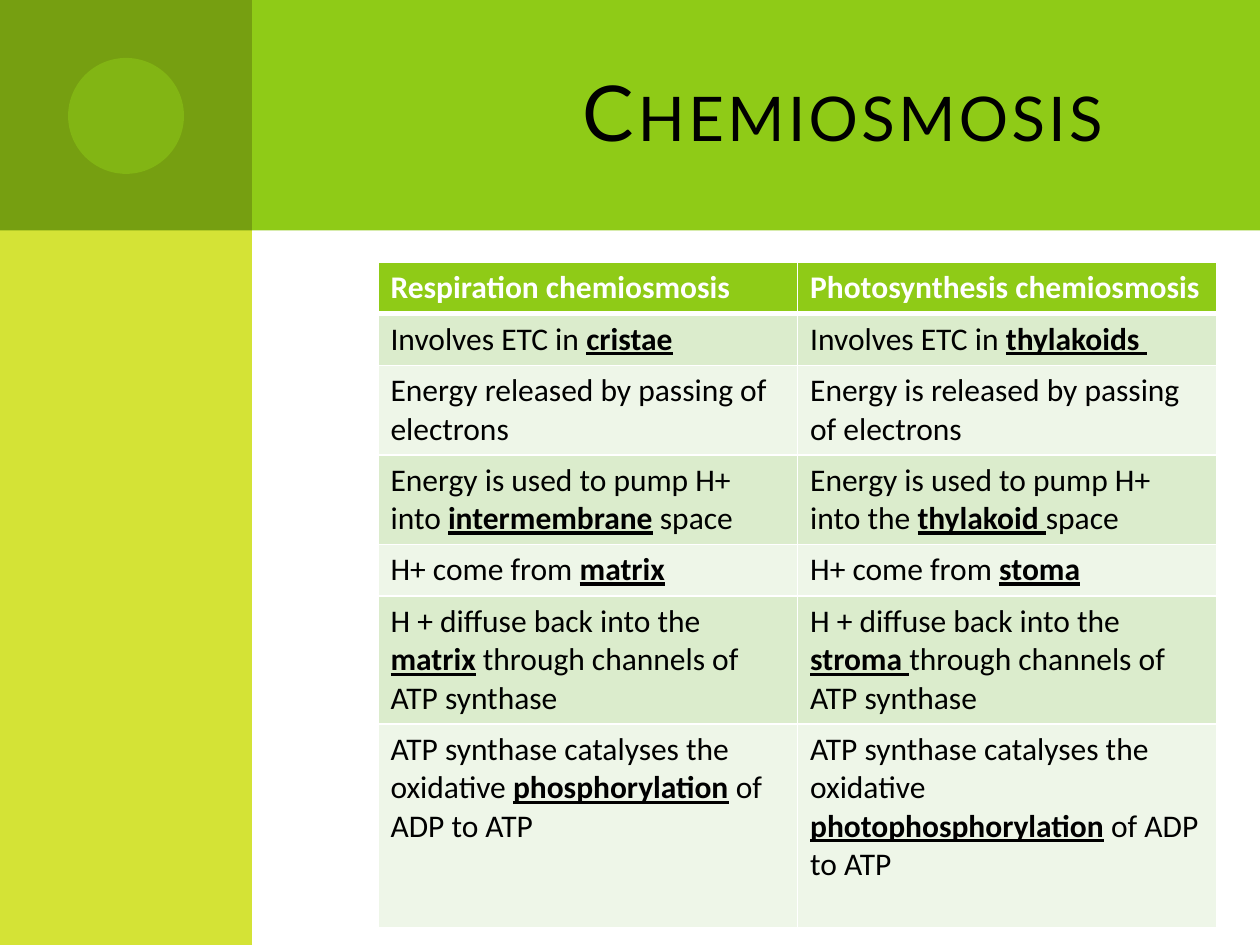
from lxml import etree
from pptx import Presentation
from pptx.dml import color
from pptx.enum import shapes, text
from pptx.oxml import ns
from pptx.util import Inches, Pt

GREEN, WHITE, BLACK = "8FCB17", "FFFFFF", "000000"


def paint(target, fill, alpha=None):
    """Give a shape or cell a solid fill, with opacity in percent."""
    target.fill.solid()
    target.fill.fore_color.rgb = color.RGBColor.from_string(fill)
    if alpha is not None:
        tint = target.fill._xPr.find(".//" + ns.qn("a:srgbClr"))
        etree.SubElement(tint, ns.qn("a:alpha"), val=str(alpha * 1000))


def add_span(para, words, font="Calibri", size=18, ink=BLACK, bold=False, underline=False):
    span = para.add_run()
    span.text = words
    span.font.name = font
    span.font.size = Pt(size)
    span.font.bold = bold
    span.font.underline = underline
    span.font.color.rgb = color.RGBColor.from_string(ink)
    return span


deck = Presentation()
deck.slide_width, deck.slide_height = Inches(10), Inches(7.5)
page = deck.slides.add_slide(deck.slide_layouts[5])
title = page.shapes.title

# Background panels
RECT, OVAL = shapes.MSO_SHAPE.RECTANGLE, shapes.MSO_SHAPE.OVAL
panels = [
    (RECT, 0.5, 0, 9.5, 1.83, GREEN, None),
    (RECT, 0, 0, 2, 7.5, "D4E336", None),
    (RECT, 0, 0, 2, 1.83, "769F11", None),
    (OVAL, 0.54, 0.46, 0.92, 0.92, GREEN, 50),
]
for kind, left, top, width, height, fill, alpha in panels:
    panel = page.shapes.add_shape(kind, Inches(left), Inches(top), Inches(width), Inches(height))
    panel.shadow.inherit = False
    panel.line.fill.background()
    paint(panel, fill, alpha)
    title._element.addprevious(panel._element)

# Title in spaced small capitals
title.left, title.top = Inches(2.67), Inches(0.25)
title.width, title.height = Inches(6.83), Inches(1.25)
box = title.text_frame
box.auto_size = text.MSO_AUTO_SIZE.NONE
box.vertical_anchor = text.MSO_ANCHOR.MIDDLE
box.margin_right = Inches(0.41)
para = box.paragraphs[0]
para.alignment = text.PP_ALIGN.RIGHT
heading = add_span(para, "Chemiosmosis", font="Lato", size=44)
heading.font._element.set("cap", "small")
heading.font._element.set("spc", "200")

# Comparison table: words between asterisks are bold and underlined
rows = [
    ("Respiration chemiosmosis", "Photosynthesis chemiosmosis"),
    ("Involves ETC in *cristae*", "Involves ETC in *thylakoids *"),
    ("Energy released by passing of electrons", "Energy is released by passing of electrons"),
    ("Energy is used to pump H+ into *intermembrane* space",
     "Energy is used to pump H+ into the *thylakoid *space"),
    ("H+ come from *matrix*", "H+ come from *stoma*"),
    ("H + diffuse back into the *matrix* through channels of ATP synthase",
     "H + diffuse back into the *stroma *through channels of ATP synthase"),
    ("ATP synthase catalyses the oxidative *phosphorylation* of ADP to ATP",
     "ATP synthase catalyses the oxidative *photophosphorylation* of ADP to ATP"),
]
heights = [0.41, 0.41, 0.71, 0.71, 0.41, 1.01, 1.62]
frame = page.shapes.add_table(len(rows), 2, Inches(3), Inches(2.08),
                              Inches(6.66), Inches(sum(heights)))
table = frame.table
for column in table.columns:
    column.width = Inches(3.33)

for r, (row, height) in enumerate(zip(rows, heights)):
    table.rows[r].height = Inches(height)
    for c, words in enumerate(row):
        cell = table.cell(r, c)
        header = r == 0
        paint(cell, GREEN if header else "DBECCC" if r % 2 else "EEF6E8")
        para = cell.text_frame.paragraphs[0]
        for i, part in enumerate(words.split("*")):
            if part:
                add_span(para, part, ink=WHITE if header else BLACK,
                         bold=header or i % 2 == 1, underline=i % 2 == 1)
        # Borders come before the fill in the cell properties
        properties = cell._tc.get_or_add_tcPr()
        for i, side in enumerate("LRTB"):
            thick = (r, side) in [(0, "B"), (1, "T")]
            line = etree.Element(ns.qn("a:ln" + side), w=str(Pt(3 if thick else 1)))
            solid = etree.SubElement(line, ns.qn("a:solidFill"))
            etree.SubElement(solid, ns.qn("a:srgbClr"), val=WHITE)
            properties.insert(i, line)

deck.save("out.pptx")
